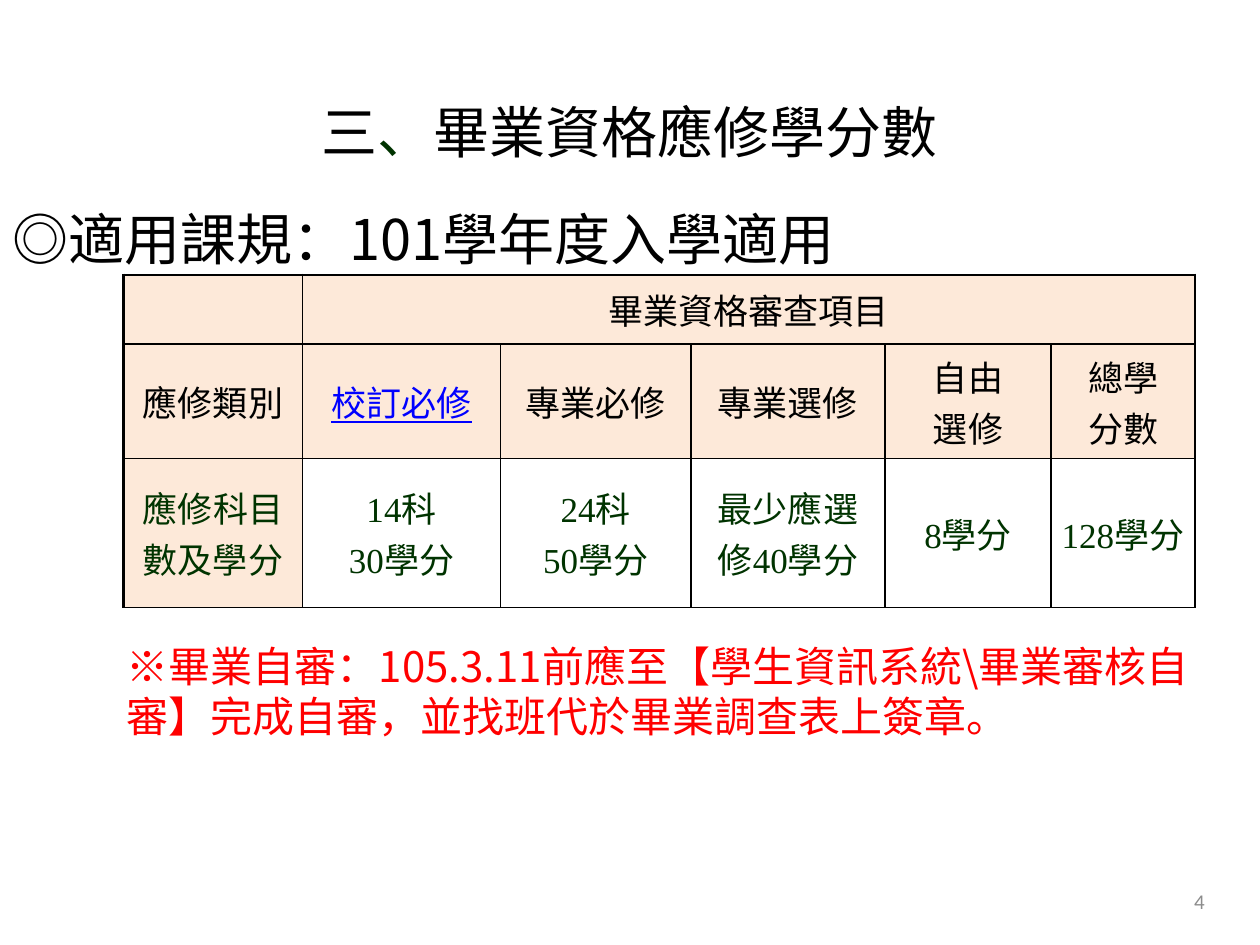
from lxml.etree import SubElement
from pptx import Presentation
from pptx.dml.color import RGBColor
from pptx.enum.text import MSO_ANCHOR as Anchor, MSO_AUTO_SIZE as AutoSize, PP_ALIGN as Align
from pptx.oxml.ns import qn
from pptx.util import Cm, Pt

BLACK = RGBColor(0x00, 0x00, 0x00)
GREEN = RGBColor(0x00, 0x33, 0x00)
BLUE = RGBColor(0x00, 0x00, 0xFF)
RED = RGBColor(0xFF, 0x00, 0x00)
GRAY = RGBColor(0x8C, 0x8C, 0x8C)
PEACH = RGBColor(0xFD, 0xE9, 0xD9)

SANS_JP = "Noto Sans CJK JP"
SANS_SC = "Noto Sans CJK SC"
SERIF = "Times New Roman"

COLUMN_WIDTHS = (3.61, 3.99, 3.84, 3.91, 3.35, 2.9)
ROW_HEIGHTS = (1.4, 2.21, 3.0)
CREDITS = (
    ("", "畢業資格審查項目", "", "", "", ""),
    ("應修類別", "校訂必修", "專業必修", "專業選修", "自由\n選修", "總學\n分數"),
    ("應修科目數及學分", "14科\n30學分", "24科\n50學分", "最少應選修40學分", "8學分", "128學分"),
)


def set_values(target, values):
    """Set each named attribute of the target."""
    for name, value in values.items():
        setattr(target, name, value)


def add_run(paragraph, text, size, color, font=SANS_SC, east_asian=SANS_SC, **extra):
    """Append a formatted run to the paragraph."""
    run = paragraph.add_run()
    run.text = text
    set_values(run.font, {"size": Pt(size), "name": font, "bold": False, **extra})
    run.font.color.rgb = color
    SubElement(run.font._element, qn("a:ea"), typeface=east_asian)


def place(shape, left, top, width, height):
    """Position a text shape and prepare its frame, which is returned."""
    box = {"left": left, "top": top, "width": width, "height": height}
    set_values(shape, {name: Cm(value) for name, value in box.items()})
    frame = shape.text_frame
    set_values(frame, {"word_wrap": True, "auto_size": AutoSize.NONE,
                       "vertical_anchor": Anchor.MIDDLE})
    return frame


def add_title(slide):
    """Fill the title with the centred heading and the rule below it."""
    frame = place(slide.shapes.title, 0, 1.35, 25.4, 4.17)
    heading, rule = frame.paragraphs[0], frame.add_paragraph()
    set_values(heading, {"alignment": Align.CENTER, "line_spacing": Pt(55),
                         "space_before": Pt(0)})
    set_values(rule, {"alignment": Align.LEFT, "line_spacing": Pt(55),
                      "space_before": Pt(6)})
    for text, color in (("三", BLACK), ("、", GREEN), ("畢業資格應修學分數", BLACK)):
        add_run(heading, text, 32, color, SANS_JP, SANS_JP)
    add_run(rule, "◎", 32, BLACK, SANS_JP, SANS_JP)
    add_run(rule, "適用課規：101學年度入學適用", 32, BLACK)


def add_text(slide, box, text, size, color, font=SANS_SC, **paragraph_values):
    """Add a text box with one paragraph."""
    shape = slide.shapes.add_textbox(0, 0, 0, 0)
    paragraph = place(shape, *box).paragraphs[0]
    set_values(paragraph, paragraph_values)
    add_run(paragraph, text, size, color, font)


def set_borders(cell, widths):
    """Draw the black cell borders, given as side and points."""
    for side, width in widths.items():
        line = SubElement(cell._tc.get_or_add_tcPr(), qn(f"a:ln{side}"), w=str(Pt(width)))
        fill = SubElement(line, qn("a:solidFill"))
        SubElement(fill, qn("a:srgbClr"), val=str(BLACK))


def format_cell(cell, row, column, text):
    """Write one cell and give it its borders and fill."""
    last = len(COLUMN_WIDTHS) - 1
    cell.vertical_anchor = Anchor.MIDDLE
    set_borders(cell, {"L": 1 if column else 1.5, "R": 1.5 if column == last else 1,
                       "T": 1 if row else 1.5, "B": 1})
    if row < 2 or column == 0:
        cell.fill.solid()
        cell.fill.fore_color.rgb = PEACH
    else:
        cell.fill.background()
    if row and column == last:
        set_values(cell, dict.fromkeys(
            ("margin_left", "margin_right", "margin_top", "margin_bottom"), 0))
    linked = text == "校訂必修"
    color = BLUE if linked else GREEN if row == 2 else BLACK
    frame = cell.text_frame
    for index, line in enumerate(text.split("\n") if text else ()):
        paragraph = frame.add_paragraph() if index else frame.paragraphs[0]
        paragraph.alignment = Align.CENTER
        add_run(paragraph, line, 20, color, SERIF, underline=linked)


def add_credit_table(slide):
    """Add the table of required credits."""
    table = slide.shapes.add_table(
        len(ROW_HEIGHTS), len(COLUMN_WIDTHS), Cm(2.49), Cm(5.54),
        Cm(sum(COLUMN_WIDTHS)), Cm(sum(ROW_HEIGHTS))).table
    set_values(table, {"first_row": False, "horz_banding": False})
    for column, width in zip(table.columns, COLUMN_WIDTHS):
        column.width = Cm(width)
    for row, height in zip(table.rows, ROW_HEIGHTS):
        row.height = Cm(height)
    for row, texts in enumerate(CREDITS):
        for column, text in enumerate(texts):
            format_cell(table.cell(row, column), row, column, text)
    header = table.cell(0, 1)
    header.merge(table.cell(0, len(COLUMN_WIDTHS) - 1))


def main():
    """Build the slide and save it."""
    presentation = Presentation()
    set_values(presentation, {"slide_width": Cm(25.4), "slide_height": Cm(19.05)})
    slide = presentation.slides.add_slide(presentation.slide_layouts[5])
    add_title(slide)
    add_text(slide, (2.31, 12.73, 22, 2.39),
             "※畢業自審：105.3.11前應至【學生資訊系統\\畢業審核自審】完成自審，並找班代於畢業調查表上簽章。",
             24, RED, line_spacing=Pt(28.5))
    add_credit_table(slide)
    add_text(slide, (18.62, 17.65, 5.92, 1.02), "4", 12, GRAY, "Calibri",
             alignment=Align.RIGHT)
    presentation.save("out.pptx")


if __name__ == "__main__":
    main()
